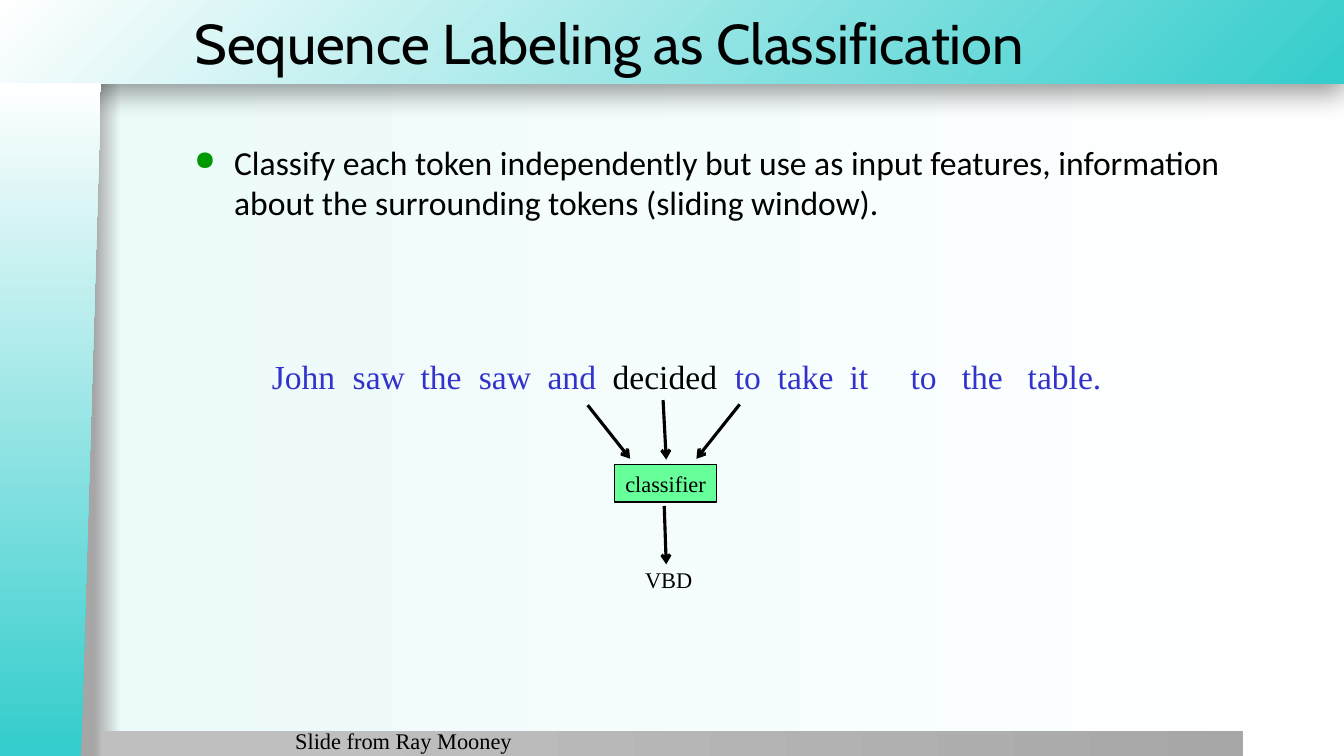
import pptx
import pptx.dml.color
import pptx.enum.shapes
import pptx.enum.text
import pptx.oxml.ns
import pptx.util
from lxml import etree

Cm, Pt = pptx.util.Cm, pptx.util.Pt
RGB = pptx.dml.color.RGBColor
SHAPE = pptx.enum.shapes.MSO_SHAPE
ANCHOR = pptx.enum.text.MSO_ANCHOR
ALIGN = pptx.enum.text.PP_ALIGN
qn = pptx.oxml.ns.qn

BLACK, WHITE = RGB(0, 0, 0), RGB(255, 255, 255)
TEAL, PALE = RGB(0x34, 0xCC, 0xCC), RGB(0xED, 0xFB, 0xFB)
DARK, GREY, LIGHT = RGB(0xA6, 0xA6, 0xA6), RGB(0xA7, 0xA7, 0xA7), RGB(0xBF, 0xBF, 0xBF)
BLUE, GREEN, MINT = RGB(0x33, 0x33, 0xCC), RGB(0, 0x99, 0), RGB(0x66, 0xFF, 0x99)
SERIF = "Times New Roman"

# Content; places are left, top, width, height in cm
TITLE = "Sequence Labeling as Classification"
POINT = ("Classify each token independently but use as input features, "
         "information about the surrounding tokens (sliding window).")
FOCUS = "decided"
# Each word with its tab stop in cm
WORDS = [("John", 0), ("saw", 2.04), ("the", 3.75), ("saw", 5.22), ("and", 6.95),
         (FOCUS, 8.59), ("to", 11.67), ("take", 12.75), ("it", 14.56),
         ("to", 16.1), ("the", 17.39), ("table.", 19.05)]
LABELS = [("VBD", (16, 14.15, 1.7, 0.94), ALIGN.CENTER),
          ("Slide from Ray Mooney", (7.19, 18.21, 8.69, 0.64), ALIGN.LEFT)]
ARROWS = [(14.81, 10.21, 15.88, 11.56), (18.64, 10.19, 17.55, 11.56),
          (16.71, 10.08, 16.79, 11.58), (16.74, 12.75, 16.79, 14.22)]


def cms(place):
    return [Cm(n) for n in place]


def node(parent, tag, **attrs):
    return etree.SubElement(parent, qn(tag), {k: str(v) for k, v in attrs.items()})


def blend(fill, root, stops, corner=False):
    """Fill left to right, or in circles from the bottom right corner."""
    fill.gradient()
    grad = root.find(".//" + qn("a:gradFill"))
    for child in list(grad):
        grad.remove(child)
    grad.set("rotWithShape", "1")
    ramp = node(grad, "a:gsLst")
    for pos, color in stops:
        node(node(ramp, "a:gs", pos=pos * 1000), "a:srgbClr", val=color)
    if corner:
        node(node(grad, "a:path", path="circle"), "a:fillToRect", l=100000, t=100000)
    else:
        node(grad, "a:lin", ang=0, scaled=0)


def band(kind, place, stops, corner=False):
    shape = slide.shapes.add_shape(kind, *cms(place))
    shape.shadow.inherit = False
    shape.line.fill.background()
    blend(shape.fill, shape._element, stops, corner)
    return shape


def style(para, name, size, color=BLACK, align=ALIGN.LEFT):
    para.alignment = align
    para.font.name, para.font.size = name, Pt(size)
    para.font.color.rgb = color


def box(place, wrap=True):
    frame = slide.shapes.add_textbox(*cms(place)).text_frame
    frame.word_wrap = wrap
    return frame.paragraphs[0]


def arrow(x1, y1, x2, y2):
    line = slide.shapes.add_connector(
        pptx.enum.shapes.MSO_CONNECTOR.STRAIGHT, *cms((x1, y1, x2, y2)))
    line.line.color.rgb, line.line.width = BLACK, Pt(2.25)
    node(line.line._get_or_add_ln(), "a:tailEnd", type="arrow")
    node(line._element.spPr, "a:effectLst")


deck = pptx.Presentation()
deck.slide_width, deck.slide_height = Cm(33.87), Cm(19.05)
slide = deck.slides.add_slide(deck.slide_layouts[5])
blend(slide.background.fill, slide._element, [(7, DARK), (9, PALE), (100, WHITE)])

# Frame
head = band(SHAPE.RECTANGLE, (0, 0, 33.87, 2.11), [(0, TEAL), (100, WHITE)], True)
shade = node(head._element.spPr.find(qn("a:effectLst")), "a:outerShdw",
             blurRad=Pt(20), dist=Pt(6), dir=90 * 60000, algn="t", rotWithShape=0)
node(node(shade, "a:srgbClr", val=BLACK), "a:alpha", val=40000)
band(SHAPE.RECTANGLE, (2.54, 18.42, 28.78, 0.63), [(20, LIGHT), (100, GREY)])
side = band(SHAPE.FLOWCHART_MANUAL_INPUT, (-7.21, 9.32, 16.97, 2.54),
            [(1, TEAL), (100, WHITE)])
side.rotation = 270
side._element.spPr.find(qn("a:xfrm")).set("flipV", "1")

# Title, brought in front of the frame
title = slide.shapes.title
slide.shapes._spTree.append(title._element)
title.left, title.top, title.width, title.height = cms((4.65, 0, 29.22, 2.11))
title.text_frame.text = TITLE
title.text_frame.vertical_anchor = ANCHOR.MIDDLE
style(title.text_frame.paragraphs[0], "Cabin", 40)

# Bullet point
para = box((4.65, 3.45, 26.67, 14.71))
para.text = POINT
para.space_before = Pt(5)
props = para._p.get_or_add_pPr()
props.set("marL", str(Cm(1)))
props.set("indent", str(Cm(-1)))
node(node(props, "a:buClr"), "a:srgbClr", val=GREEN)
node(props, "a:buSzPct", val=80000)
node(props, "a:buChar", char="●")
style(para, "Calibri", 24)

# Sentence, one tab stop a word
para = box((6.6, 8.84, 21.62, 1.3))
tabs = node(para._p.get_or_add_pPr(), "a:tabLst")
for word, stop in WORDS:
    if stop:
        node(tabs, "a:tab", pos=Cm(stop), algn="l")
    run = para.add_run()
    run.text = "\t" + word if stop else word
    run.font.color.rgb = BLACK if word == FOCUS else BLUE
style(para, SERIF, 24)

# Classifier and its arrows
rect = slide.shapes.add_shape(SHAPE.RECTANGLE, *cms((15.49, 11.71, 2.57, 0.94)))
rect.shadow.inherit = False
rect.fill.solid()
rect.fill.fore_color.rgb = MINT
rect.line.color.rgb, rect.line.width = BLACK, Pt(1)
rect.text_frame.text = "classifier"
rect.text_frame.word_wrap = False
rect.text_frame.vertical_anchor = ANCHOR.MIDDLE
style(rect.text_frame.paragraphs[0], SERIF, 16, align=ALIGN.CENTER)
for ends in ARROWS:
    arrow(*ends)

for text, place, align in LABELS:
    para = box(place, False)
    para.text = text
    style(para, SERIF, 16, align=align)

deck.save("out.pptx")
